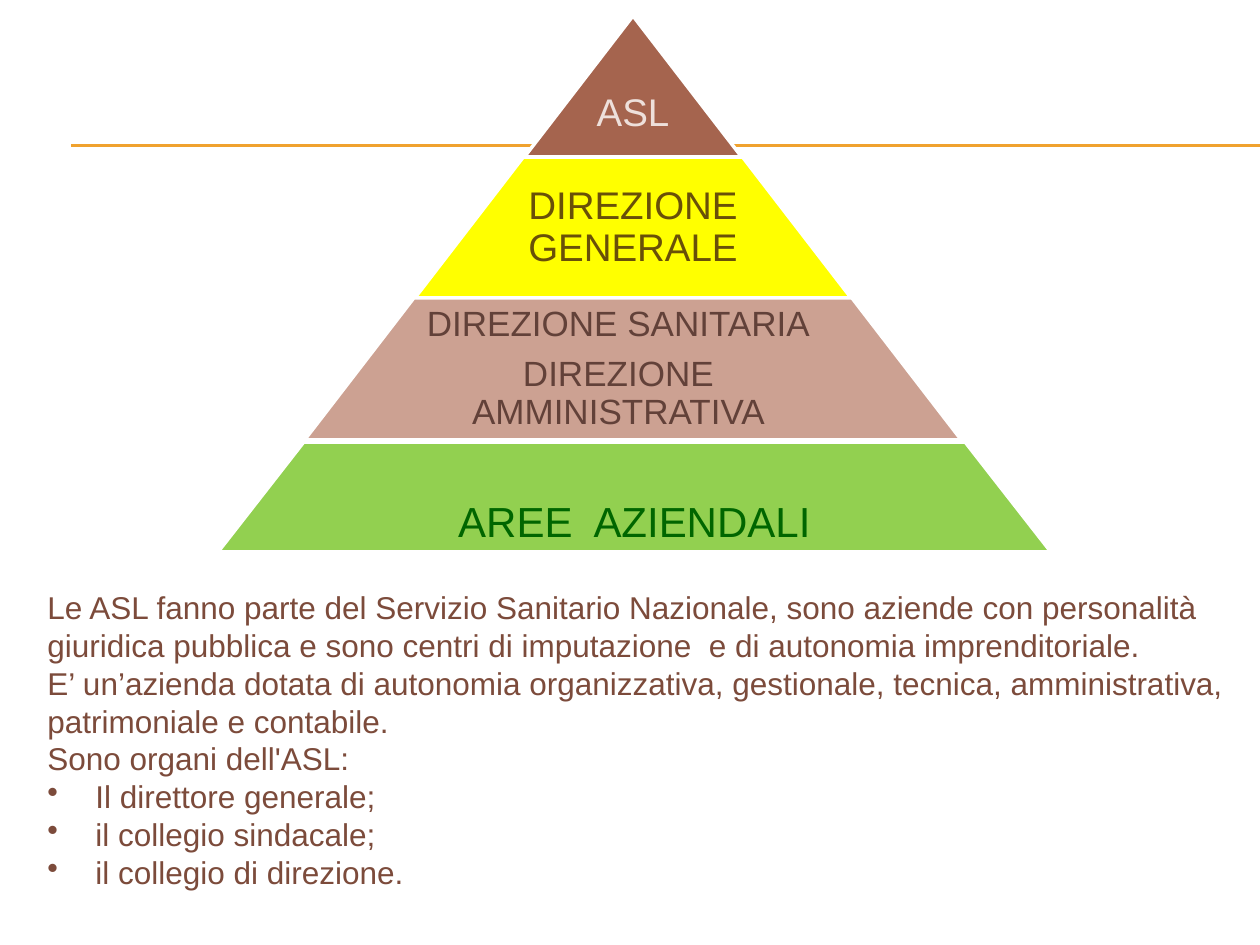
import pptx
import pptx.dml.color
import pptx.enum.shapes
import pptx.enum.text
import pptx.oxml.ns
import pptx.util
from lxml import etree

EMU_PER_PX = 914400 / 126
COLORS = {
    "rule": "F0A22E", "edge": "FFFFFF",
    "asl": "A5644E", "asl_text": "EEE0DB",
    "general": "FFFF00", "general_text": "695008",
    "offices": "CCA192", "offices_text": "624139",
    "areas": "92D050", "areas_text": "006600",
    "body": "7C4B3B",
}
ANCHOR = pptx.enum.text.MSO_ANCHOR
CENTER_X = 633
TIER_TOP, TIER_STEP, TIER_HEIGHT, TIER_WIDTH = 16, 141, 142, 219
INSET = 4
TIERS = [
    ("asl", ["ASL"], 22, 219, 58),
    ("general", ["DIREZIONE GENERALE"], 22, 285, INSET),
    ("offices", ["DIREZIONE SANITARIA", "DIREZIONE AMMINISTRATIVA"], 20, 427, INSET),
]
INTRO = [
    "Le ASL fanno parte del Servizio Sanitario Nazionale, sono aziende con personalità "
    "giuridica pubblica e sono centri di imputazione  e di autonomia imprenditoriale.",
    "E’ un’azienda dotata di autonomia organizzativa, gestionale, tecnica, amministrativa, "
    "patrimoniale e contabile.\vSono organi dell'ASL:",
]
ORGANS = ["Il direttore generale;", "il collegio sindacale;", "il collegio di direzione."]


def px(length):
    return pptx.util.Emu(round(length * EMU_PER_PX))


def rgb(name):
    return pptx.dml.color.RGBColor.from_string(COLORS[name])


def add_rule(slide, y):
    rule = slide.shapes.add_connector(
        pptx.enum.shapes.MSO_CONNECTOR.STRAIGHT, px(71), px(y), px(1260), px(y))
    rule.line.color.rgb = rgb("rule")
    rule.line.width = pptx.util.Pt(0.75)
    etree.SubElement(rule.element.spPr, pptx.oxml.ns.qn("a:effectLst"))


def add_tier(slide, left, top, width, height, slope, color):
    tier = slide.shapes.add_shape(
        pptx.enum.shapes.MSO_SHAPE.TRAPEZOID, px(left), px(top), px(width), px(height))
    tier.adjustments[0] = slope
    tier.shadow.inherit = False
    tier.fill.solid()
    tier.fill.fore_color.rgb = rgb(color)
    tier.line.color.rgb = rgb("edge")
    tier.line.width = pptx.util.Pt(2)
    return tier


def add_text_box(slide, left, top, width, height):
    frame = slide.shapes.add_textbox(px(left), px(top), px(width), px(height)).text_frame
    frame.word_wrap = True
    return frame


def write_paragraphs(frame, texts, size, color, align=pptx.enum.text.PP_ALIGN.LEFT):
    for index, text in enumerate(texts):
        paragraph = frame.paragraphs[0] if index == 0 else frame.add_paragraph()
        paragraph.text = text
        paragraph.alignment = align
        paragraph.font.name = "Arial"
        paragraph.font.size = pptx.util.Pt(size)
        paragraph.font.color.rgb = rgb(color)


def add_tier_label(slide, top, width, texts, size, color, top_inset):
    frame = add_text_box(slide, CENTER_X - width / 2, top, width, TIER_HEIGHT)
    frame.vertical_anchor = ANCHOR.MIDDLE
    frame.margin_left = frame.margin_right = frame.margin_bottom = px(INSET)
    frame.margin_top = px(top_inset)
    write_paragraphs(frame, texts, size, color, pptx.enum.text.PP_ALIGN.CENTER)
    for paragraph in frame.paragraphs:
        paragraph.line_spacing = 0.9
        paragraph.space_after = pptx.util.Pt(round(size * 0.35))
    return frame


def add_bullet(paragraph, indent):
    properties = paragraph._p.get_or_add_pPr()
    properties.set("marL", str(px(indent)))
    properties.set("indent", str(-px(indent)))
    bullet = etree.Element(pptx.oxml.ns.qn("a:buChar"), char="•")
    properties.insert(0, bullet)


def add_pyramid(slide):
    for level, (part, texts, size, label_width, top_inset) in enumerate(TIERS):
        top = TIER_TOP + level * TIER_STEP
        width = TIER_WIDTH * (level + 1)
        add_tier(slide, CENTER_X - width / 2, top, width, TIER_HEIGHT, 0.77, part)
        label = add_tier_label(slide, top, label_width, texts, size, part + "_text", top_inset)
        if part == "offices":
            label.paragraphs[0]._p.get_or_add_pPr().set("marR", str(px(29)))
    areas = add_tier(slide, 218, 442, 833, 110, 0.78, "areas")
    areas.text_frame.vertical_anchor = ANCHOR.BOTTOM
    write_paragraphs(areas.text_frame, ["AREE  AZIENDALI"], 24, "areas_text",
                     pptx.enum.text.PP_ALIGN.CENTER)


def add_description(slide):
    frame = add_text_box(slide, 35, 582, 1201, 318)
    write_paragraphs(frame, INTRO + ORGANS, 18, "body")
    for organ in frame.paragraphs[len(INTRO):]:
        add_bullet(organ, 48)


def main():
    deck = pptx.Presentation()
    deck.slide_width, deck.slide_height = px(1260), px(945)
    slide = deck.slides.add_slide(deck.slide_layouts[6])
    for y in (145, 146):
        add_rule(slide, y)
    add_pyramid(slide)
    add_description(slide)
    deck.save("out.pptx")


if __name__ == "__main__":
    main()
